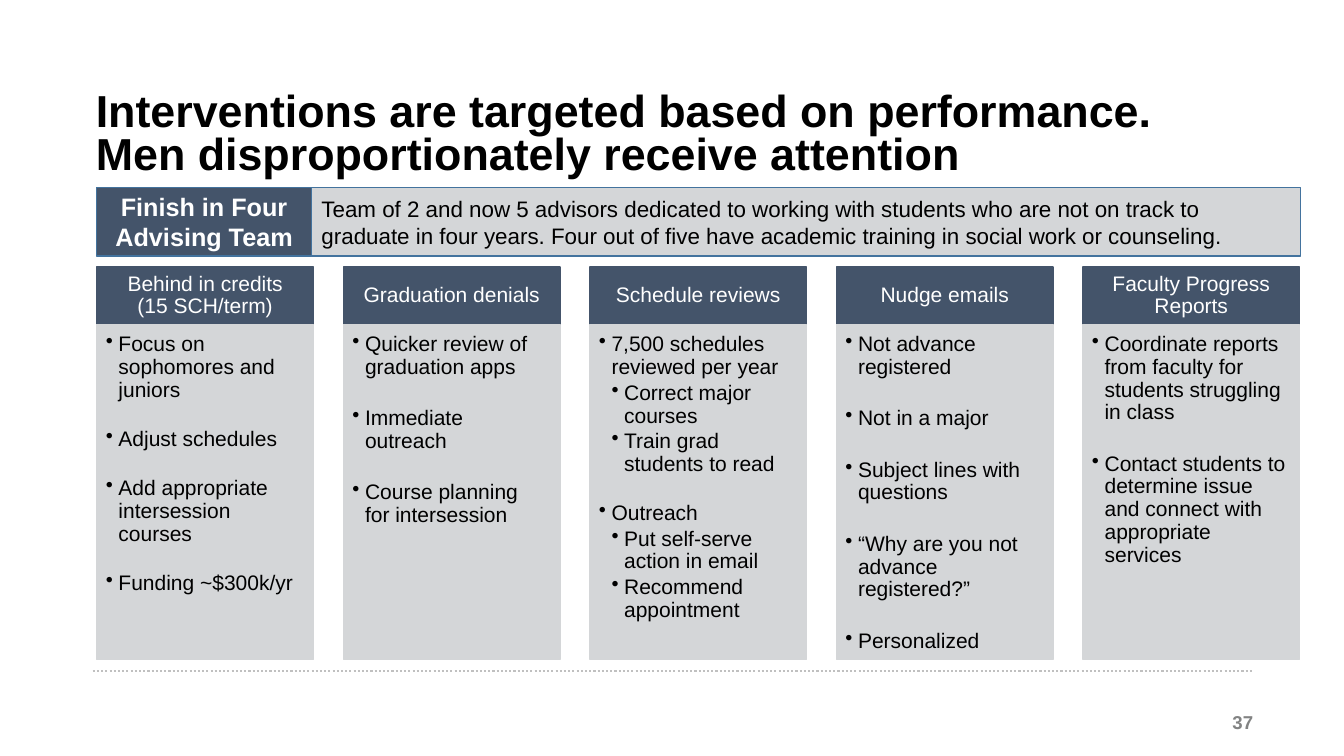
"""Build the slide on targeted student interventions."""
from lxml.etree import SubElement
from pptx import Presentation
from pptx.dml.color import RGBColor
from pptx.enum.dml import MSO_LINE
from pptx.enum.shapes import MSO_CONNECTOR, MSO_SHAPE
from pptx.enum.text import MSO_ANCHOR, PP_ALIGN
from pptx.oxml.ns import qn
from pptx.util import Inches, Pt

NAVY, GREY, BLUE = "44546A", "D4D6D8", "43739E"
BLACK, WHITE = "000000", "FFFFFF"
LEFT, PITCH, COLUMN_WIDTH = 0.96, 2.445, 2.15
HEADER_TOP, HEADER_HEIGHT, BODY_HEIGHT = 2.65, 0.57, 3.32
BULLET_INDENT = 0.125


def style(paragraph, size, color, bold=False, align=PP_ALIGN.LEFT):
    paragraph.alignment = align
    paragraph.font.name = "Arial"
    paragraph.font.size = Pt(size)
    paragraph.font.bold = bold
    paragraph.font.color.rgb = RGBColor.from_string(color)


def panel(left, top, width, height, fill, line, insets, anchor=MSO_ANCHOR.MIDDLE):
    box = slide.shapes.add_shape(MSO_SHAPE.RECTANGLE, Inches(left), Inches(top),
                                 Inches(width), Inches(height))
    box.shadow.inherit = False
    box.fill.solid()
    box.fill.fore_color.rgb = RGBColor.from_string(fill)
    box.line.color.rgb = RGBColor.from_string(line)
    box.line.width = Pt(1)
    frame = box.text_frame
    frame.word_wrap = True
    frame.vertical_anchor = anchor
    frame.margin_left, frame.margin_top, frame.margin_right, frame.margin_bottom = map(Inches, insets)
    return frame


deck = Presentation()
deck.slide_width, deck.slide_height = Inches(13.33), Inches(7.5)
slide = deck.slides.add_slide(deck.slide_layouts[5])

title = slide.shapes.title
title.left, title.top, title.width, title.height = map(Inches, (0.88, 0.85, 11.49, 0.77))
heading = title.text_frame
heading.word_wrap = True
heading.vertical_anchor = MSO_ANCHOR.TOP
heading.margin_left = heading.margin_top = heading.margin_right = heading.margin_bottom = Inches(0.07)
heading.text = "Interventions are targeted based on performance.\vMen disproportionately receive attention"
heading.paragraphs[0].line_spacing = 0.8
style(heading.paragraphs[0], 32, BLACK, bold=True)

footer_rule = slide.shapes.add_connector(MSO_CONNECTOR.STRAIGHT, Inches(0.92), Inches(6.66),
                                         Inches(12.42), Inches(6.66))
footer_rule.line.color.rgb = RGBColor.from_string("C0C0C0")
footer_rule.line.width = Pt(1.5)
footer_rule.line.dash_style = MSO_LINE.ROUND_DOT
SubElement(footer_rule._element.spPr, qn("a:effectLst"))

page_number = slide.shapes.add_textbox(Inches(9.56), Inches(6.96), Inches(3), Inches(0.4)).text_frame
page_number.word_wrap = True
page_number.vertical_anchor = MSO_ANCHOR.MIDDLE
page_number.margin_right = Inches(0.13)
page_number.text = "37"
style(page_number.paragraphs[0], 13.3, "828383", bold=True, align=PP_ALIGN.RIGHT)

# Each column: heading, gap in points after a topic, topics as (point, sub-points)
interventions = [
    ("Behind in credits\v(15 SCH/term)", 19, [
        ("Focus on sophomores and juniors", []),
        ("Adjust schedules", []),
        ("Add appropriate intersession courses", []),
        ("Funding ~$300k/yr", [])]),
    ("Graduation denials", 20.5, [
        ("Quicker review of graduation apps", []),
        ("Immediate outreach", []),
        ("Course planning for intersession", [])]),
    ("Schedule reviews", 18.5, [
        ("7,500 schedules reviewed per year",
         ["Correct major courses", "Train grad students to read"]),
        ("Outreach", ["Put self-serve action in email", "Recommend appointment"])]),
    ("Nudge emails", 20.5, [
        ("Not advance registered", []),
        ("Not in a major", []),
        ("Subject lines with questions", []),
        ("“Why are you not advance registered?”", []),
        ("Personalized", [])]),
    ("Faculty Progress Reports", 20.5, [
        ("Coordinate reports from faculty for students struggling in class", []),
        ("Contact students to determine issue and connect with appropriate services", [])]),
]

for column, (name, topic_gap, topics) in enumerate(interventions):
    left = LEFT + column * PITCH
    header = panel(left, HEADER_TOP, COLUMN_WIDTH, HEADER_HEIGHT, NAVY, NAVY,
                   (0.12, 0.07, 0.12, 0.07))
    header.text = name
    header.paragraphs[0].line_spacing = 0.9
    style(header.paragraphs[0], 15, WHITE, align=PP_ALIGN.CENTER)

    body = panel(left, HEADER_TOP + HEADER_HEIGHT, COLUMN_WIDTH, BODY_HEIGHT, GREY, GREY,
                 (0.09, 0.09, 0.12, 0.13), MSO_ANCHOR.TOP)
    points = []
    for topic, details in topics:
        lines = [topic, *details]
        for depth, line in enumerate(lines):
            gap = topic_gap if depth == len(details) else 2.25
            points.append((line, 2 if depth else 1, gap))
    for index, (line, level, gap) in enumerate(points):
        point = body.add_paragraph() if index else body.paragraphs[0]
        point.text = line
        point.level = level
        point.line_spacing = 0.9
        point.space_after = Pt(gap if index < len(points) - 1 else 0)
        properties = point._p.get_or_add_pPr()
        properties.set("marL", str(Inches(BULLET_INDENT * level)))
        properties.set("indent", str(-Inches(BULLET_INDENT)))
        SubElement(properties, qn("a:buChar"), char="•")
        style(point, 15, BLACK)

banner = [
    (LEFT, 2.13, NAVY, "Finish in Four Advising Team", 18, WHITE, True, PP_ALIGN.CENTER),
    (LEFT + 2.13, 9.81, GREY,
     "Team of 2 and now 5 advisors dedicated to working with students who are not on track to "
     "graduate in four years. Four out of five have academic training in social work or counseling.",
     16, BLACK, False, PP_ALIGN.LEFT),
]
for left, width, fill, words, size, color, bold, align in banner:
    team = panel(left, 1.86, width, 0.68, fill, BLUE, (0.1, 0.05, 0.1, 0.05))
    team.text = words
    style(team.paragraphs[0], size, color, bold, align)

deck.save("out.pptx")
